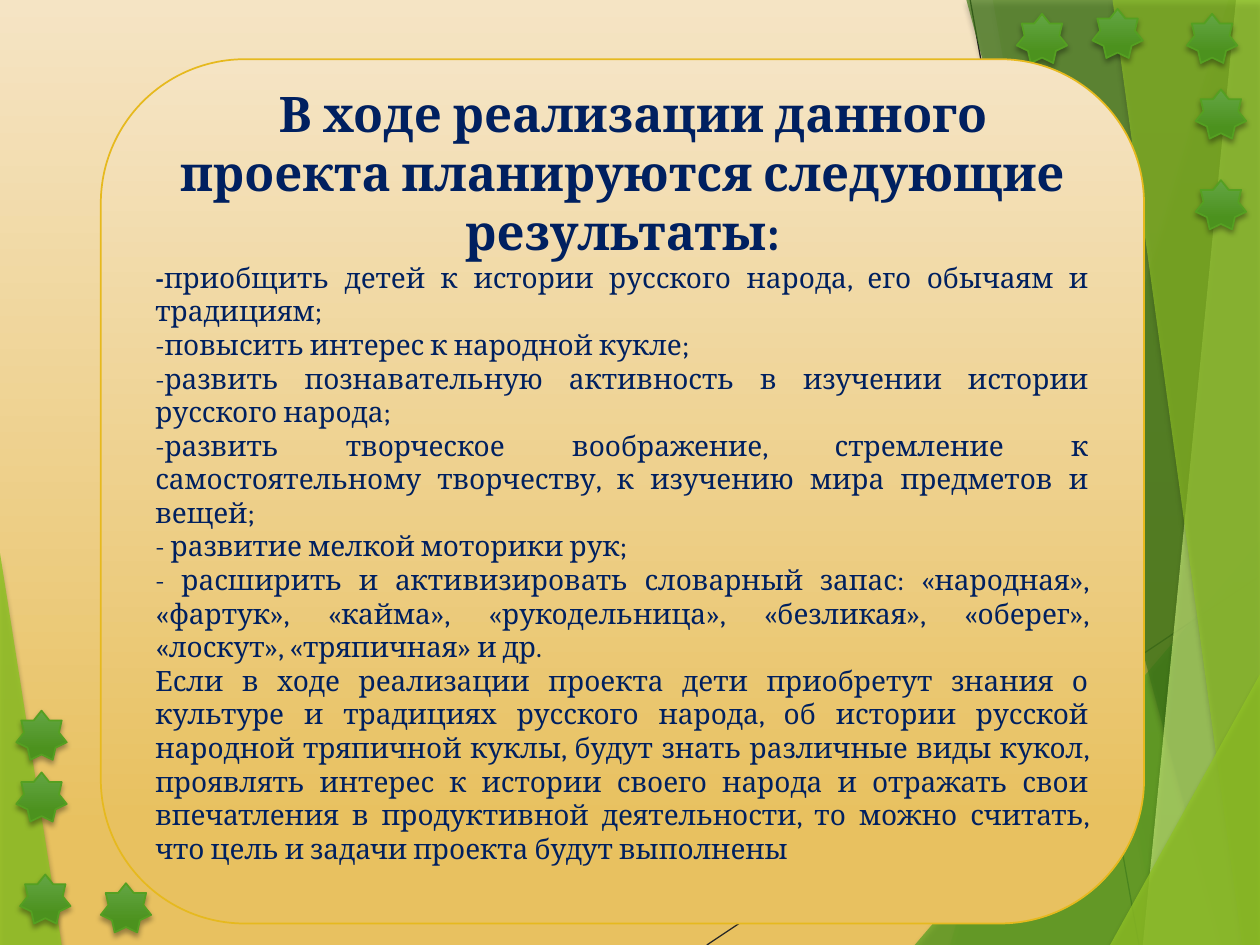
from lxml import etree
from pptx import Presentation
from pptx.dml.color import RGBColor
from pptx.enum.shapes import MSO_CONNECTOR, MSO_SHAPE
from pptx.enum.text import MSO_ANCHOR, PP_ALIGN
from pptx.oxml.ns import qn
from pptx.util import Inches, Pt

STRAIGHT = MSO_CONNECTOR.STRAIGHT
STAR, ROUNDED = MSO_SHAPE.STAR_7_POINT, MSO_SHAPE.ROUNDED_RECTANGLE
MIDDLE = MSO_ANCHOR.MIDDLE
CENTER, JUSTIFY = PP_ALIGN.CENTER, PP_ALIGN.JUSTIFY

CREAM, HONEY = RGBColor(0xF5, 0xE4, 0xC4), RGBColor(0xE8, 0xC1, 0x60)
GOLD, NAVY = RGBColor(0xE6, 0xB9, 0x1E), RGBColor(0x00, 0x20, 0x60)
STAR_TOP, STAR_BASE = RGBColor(0x63, 0xA5, 0x44), RGBColor(0x4C, 0x92, 0x1E)
LIME, GRASS = RGBColor(0x90, 0xC2, 0x26), RGBColor(0x54, 0xA0, 0x21)
FOREST, PALE = RGBColor(0x3F, 0x78, 0x19), RGBColor(0xC0, 0xE4, 0x74)
CHARCOAL, BLACK = RGBColor(0x26, 0x26, 0x26), RGBColor(0, 0, 0)

COLUMNS, ROWS = 10, 7.5
STAR_SIZE = (0.4, 0.39)

RAYS = [((5.61, 7.5), (10, 4.57)), ((7.7, 0), (9.04, 7.5))]
# Fill colour, opacity in percent, corners
FACETS = [
    (LIME, 85, [(0, 4.39), (0.49, 7.5), (0, 7.5)]),
    (LIME, 30, [(9.75, 0), (7.54, 7.5), (10, 7.5), (10, 0)]),
    (LIME, 20, [(7.88, 0), (9.19, 7.5), (10, 7.5), (10, 0)]),
    (GRASS, 72, [(7.26, 7.5), (10, 4.29), (10, 7.5)]),
    (FOREST, 70, [(7.67, 0), (9.7, 7.5), (10, 7.5), (10, 0)]),
    (PALE, 70, [(9.81, 0), (9.07, 7.5), (10, 7.5), (10, 0)]),
    (LIME, 65, [(8.83, 0), (9.86, 7.5), (10, 7.5), (10, 0)]),
    (LIME, 80, [(8.81, 7.5), (10, 5.35), (10, 7.5)]),
]
STARS_BEHIND = [(8.07, 0.11), (8.67, 0.07), (9.42, 0.11),
                (0.13, 6.13), (0.16, 6.94), (0.13, 5.64)]
STARS_IN_FRONT = [(0.8, 7.01), (9.49, 1.43), (9.49, 0.71)]

TITLE = "В ходе реализации данного проекта планируются следующие результаты:"
# Bold lead, regular text
RESULTS = [
    ("-", "приобщить детей к истории русского народа, его обычаям и традициям;"),
    ("", "-повысить интерес к народной кукле;"),
    ("", "-развить познавательную активность в изучении истории русского народа;"),
    ("", "-развить творческое воображение, стремление к самостоятельному "
         "творчеству, к изучению мира предметов и вещей;"),
    ("", "- развитие мелкой моторики рук;"),
    ("", "- расширить и активизировать словарный запас: «народная», «фартук», "
         "«кайма», «рукодельница», «безликая», «оберег», «лоскут», «тряпичная» "
         "и др."),
    ("", "Если в ходе реализации проекта дети приобретут знания о культуре и "
         "традициях русского народа, об истории русской народной тряпичной куклы, "
         "будут знать различные виды кукол, проявлять интерес к истории своего "
         "народа и отражать свои впечатления в продуктивной деятельности, то можно "
         "считать, что цель и задачи проекта будут выполнены"),
]


def set_all(target, values):
    for name, value in values.items():
        setattr(target, name, value)


def set_opacity(colour, percent):
    etree.SubElement(colour, qn("a:alpha"), val=str(percent * 1000))


def fill_downward(fill, top, base, end):
    """Gradient from top colour to base colour, which is reached at share end."""
    fill.gradient()
    fill.gradient_angle = 270
    for stop, colour, position in zip(fill.gradient_stops, (top, base), (0, end)):
        stop.color.rgb = colour
        stop.position = position


class Painter:
    font = {"name": "Cambria"}

    def __init__(self, deck):
        self.cell_width = deck.slide_width / COLUMNS
        self.cell_height = deck.slide_height / ROWS
        self.page = deck.slides.add_slide(deck.slide_layouts[6])
        fill_downward(self.page.background.fill, CREAM, HONEY, 0.88)

    def place(self, column, row):
        return round(column * self.cell_width), round(row * self.cell_height)

    def add_shadow(self, shape):
        shape.shadow.inherit = False
        effects = shape.element.spPr.find(qn("a:effectLst"))
        shadow = etree.SubElement(
            effects, qn("a:outerShdw"), blurRad=str(int(Pt(3))),
            dist=str(int(Pt(2))), dir="5400000", rotWithShape="0")
        set_opacity(etree.SubElement(shadow, qn("a:srgbClr"), val=str(BLACK)), 35)

    def ray(self, start, end):
        line = self.page.shapes.add_connector(
            STRAIGHT, *self.place(*start), *self.place(*end))
        line.line.color.rgb = CHARCOAL
        line.line.width = Pt(0.75)
        etree.SubElement(line.element.spPr, qn("a:effectLst"))

    def facet(self, colour, opacity, corners):
        first, *others = [self.place(*corner) for corner in corners]
        builder = self.page.shapes.build_freeform(*first)
        builder.add_line_segments(others, close=True)
        shape = builder.convert_to_shape()
        shape.fill.solid()
        shape.fill.fore_color.rgb = colour
        set_opacity(shape.element.spPr.find(".//" + qn("a:srgbClr")), opacity)
        shape.line.fill.background()
        self.add_shadow(shape)

    def preset(self, kind, position, size, gradient, outline):
        shape = self.page.shapes.add_shape(
            kind, *self.place(*position), *self.place(*size))
        fill_downward(shape.fill, *gradient)
        shape.line.color.rgb = outline
        shape.line.width = Pt(1)
        shape.shadow.inherit = False
        return shape

    def star(self, column, row):
        self.add_shadow(self.preset(
            STAR, (column, row), STAR_SIZE, (STAR_TOP, STAR_BASE, 0.78), GRASS))

    def add_text(self, para, text, size, bold=False):
        span = para.add_run()
        span.text = text
        set_all(span.font, {**self.font, "size": Pt(size), "bold": bold})
        span.font.color.rgb = NAVY

    def card(self, position, size, title, results):
        box = self.preset(ROUNDED, position, size, (CREAM, HONEY, 0.88), GOLD)
        frame = box.text_frame
        set_all(frame, {
            "word_wrap": True, "vertical_anchor": MIDDLE,
            "margin_left": Inches(0.1), "margin_right": Inches(0.1),
            "margin_top": Inches(0.05), "margin_bottom": Inches(0.32)})
        heading = frame.paragraphs[0]
        heading.alignment = CENTER
        heading._p.get_or_add_pPr().set("indent", str(int(Inches(0.17))))
        self.add_text(heading, title, 28, bold=True)
        for lead, result in results:
            para = frame.add_paragraph()
            para.alignment = JUSTIFY
            if lead:
                self.add_text(para, lead, 16, bold=True)
            self.add_text(para, result, 16)


def main():
    deck = Presentation()
    deck.slide_width, deck.slide_height = Inches(10), Inches(7.5)
    painter = Painter(deck)
    for ray in RAYS:
        painter.ray(*ray)
    for facet in FACETS:
        painter.facet(*facet)
    for position in STARS_BEHIND:
        painter.star(*position)
    painter.card((0.8, 0.47), (8.28, 6.86), TITLE, RESULTS)
    for position in STARS_IN_FRONT:
        painter.star(*position)
    deck.save("out.pptx")


if __name__ == "__main__":
    main()
